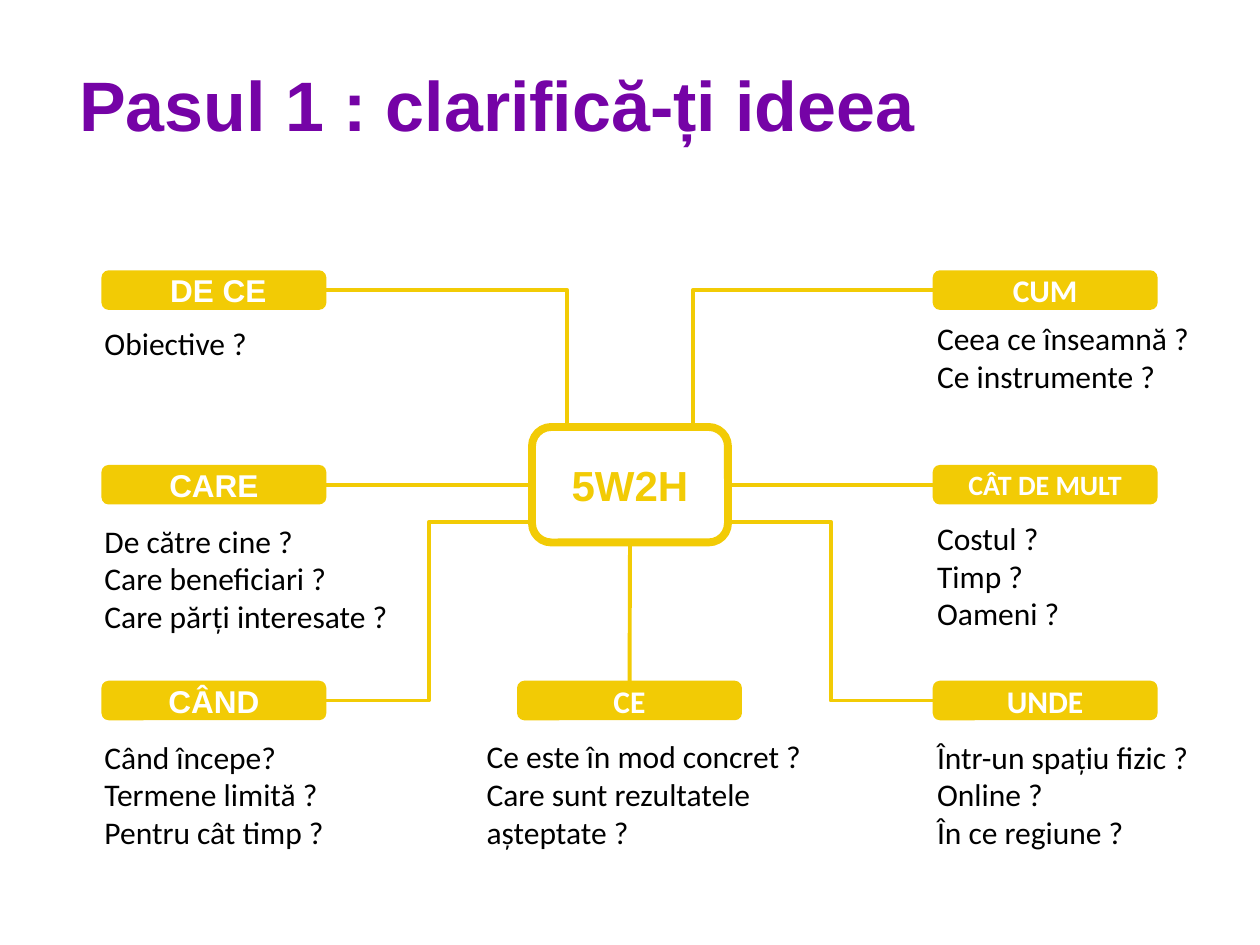
from lxml.etree import SubElement
from pptx import Presentation
from pptx.dml.color import RGBColor
from pptx.enum.shapes import MSO_CONNECTOR as CONN, MSO_SHAPE as SHAPE
from pptx.enum.text import MSO_ANCHOR as ANCHOR, MSO_AUTO_SIZE as AUTO, PP_ALIGN as ALIGN
from pptx.oxml.ns import qn
from pptx.util import Pt

YELLOW = RGBColor(0xF2, 0xCB, 0x05)
PURPLE = RGBColor(0x75, 0x03, 0xA6)
WHITE = RGBColor(0xFF, 0xFF, 0xFF)
BLACK = RGBColor(0, 0, 0)

LEFT, MIDDLE, RIGHT = 58.5, 296, 533.5
TOP, CENTRE, BOTTOM = 155, 266.2, 389.5
LABEL_W, LABEL_H = 127.5, 21.6
HUB = (304, 244, 112, 66)

# label, font, size, label left, label top, notes box (left, top, width), notes
TOPICS = [
    (" DE CE", "Arial", 18, LEFT, TOP, (52.6, 181.4, 104.4), ["Obiective ?"]),
    ("CARE", "Arial", 18, LEFT, CENTRE, (52.6, 294.5, 178),
     ["De către cine ?", "Care beneficiari ?", "Care părți interesate ?"]),
    ("CÂND", "Arial", 18, LEFT, BOTTOM, (52.6, 418, 157),
     ["Când începe?", "Termene limită ?", "Pentru cât timp ?"]),
    ("CE", "Calibri", 18, MIDDLE, BOTTOM, (271, 417.6, 214),
     ["Ce este în mod concret ?", "Care sunt rezultatele așteptate ?"]),
    ("UNDE", "Calibri", 18, RIGHT, BOTTOM, (528.4, 418, 169),
     ["Într-un spațiu fizic ?", "Online ?", "În ce regiune ?"]),
    ("CÂT DE MULT", "Calibri", 16, RIGHT, CENTRE, (528.4, 293, 112.5),
     ["Costul ?", "Timp ?", "Oameni ?"]),
    ("CUM", "Calibri", 18, RIGHT, TOP, (528.4, 178.8, 169),
     ["Ceea ce înseamnă ?", "Ce instrumente ?"]),
]


def set_font(p, name, size, color, bold=False):
    p.font.name = name
    p.font.size = Pt(size)
    p.font.color.rgb = color
    p.font.bold = bold


def set_title(slide, text):
    title = slide.shapes.title
    title.left, title.top, title.width, title.height = Pt(38), Pt(36.7), Pt(512), Pt(104.4)
    tf = title.text_frame
    tf.text = text
    tf.auto_size = AUTO.NONE
    tf.vertical_anchor = ANCHOR.TOP
    p = tf.paragraphs[0]
    p.alignment = ALIGN.LEFT
    p.line_spacing = 0.9
    set_font(p, "Arial", 40, PURPLE, True)


def add_box(slide, text, box, font, size, color, fill, line_width):
    sp = slide.shapes.add_shape(SHAPE.ROUNDED_RECTANGLE, *map(Pt, box))
    sp.shadow.inherit = False
    if fill is None:
        sp.fill.background()
    else:
        sp.fill.solid()
        sp.fill.fore_color.rgb = fill
    sp.line.color.rgb = YELLOW
    sp.line.width = Pt(line_width)
    tf = sp.text_frame
    tf.text = text
    tf.word_wrap = True
    tf.vertical_anchor = ANCHOR.MIDDLE
    p = tf.paragraphs[0]
    p.alignment = ALIGN.CENTER
    set_font(p, font, size, color, True)
    return sp


def add_notes(slide, lines, left, top, width):
    height = 7.2 + 22 * max(len(lines), 1)
    tf = slide.shapes.add_textbox(*map(Pt, (left, top, width, height))).text_frame
    tf.text = "\n".join(lines)
    tf.word_wrap = True
    tf.auto_size = AUTO.SHAPE_TO_FIT_TEXT
    for p in tf.paragraphs:
        set_font(p, "Calibri", 18, BLACK)


def add_line(slide, kind, x1, y1, x2, y2):
    line = slide.shapes.add_connector(kind, *map(Pt, (x1, y1, x2, y2)))
    line.line.color.rgb = YELLOW
    line.line.width = Pt(2.25)
    SubElement(line._element.spPr, qn("a:effectLst"))
    return line


def add_elbow(slide, start, end, bend):
    """Draw an elbow whose bend lies at a share of its width, in 1/100000."""
    line = add_line(slide, CONN.ELBOW, *start, *end)
    guides = line._element.spPr.find(qn("a:prstGeom")).find(qn("a:avLst"))
    SubElement(guides, qn("a:gd"), name="adj1", fmla=f"val {bend}")


def join(slide, first, first_side, second, second_side):
    line = add_line(slide, CONN.STRAIGHT, 0, 0, 0, 0)
    line.begin_connect(first, first_side)
    line.end_connect(second, second_side)


def main():
    prs = Presentation()
    prs.slide_width, prs.slide_height = Pt(720), Pt(540)
    slide = prs.slides.add_slide(prs.slide_layouts[5])
    set_title(slide, "Pasul 1 : clarifică-ți ideea")

    hub_left, hub_top, hub_width, _ = HUB
    hub_right = hub_left + hub_width
    top_mid, bottom_mid = TOP + LABEL_H / 2, BOTTOM + LABEL_H / 2
    label_right = LEFT + LABEL_W
    add_elbow(slide, (323.5, hub_top), (label_right, top_mid), -500)
    add_elbow(slide, (396.5, hub_top), (RIGHT, top_mid), -500)
    add_elbow(slide, (hub_left, 298.5), (label_right, bottom_mid), 50000)
    add_elbow(slide, (hub_right, 298.2), (RIGHT, bottom_mid), 50000)

    hub = add_box(slide, "5W2H", HUB, "Arial", 24, YELLOW, None, 4.5)
    labels = {}
    for text, font, size, left, top, notes_box, notes in TOPICS:
        labels[text] = add_box(slide, text, (left, top, LABEL_W, LABEL_H),
                               font, size, WHITE, YELLOW, 1)
        add_notes(slide, notes, *notes_box)

    join(slide, labels["CARE"], 3, hub, 1)
    join(slide, hub, 3, labels["CÂT DE MULT"], 1)
    join(slide, hub, 2, labels["CE"], 0)
    prs.save("out.pptx")


if __name__ == "__main__":
    main()
